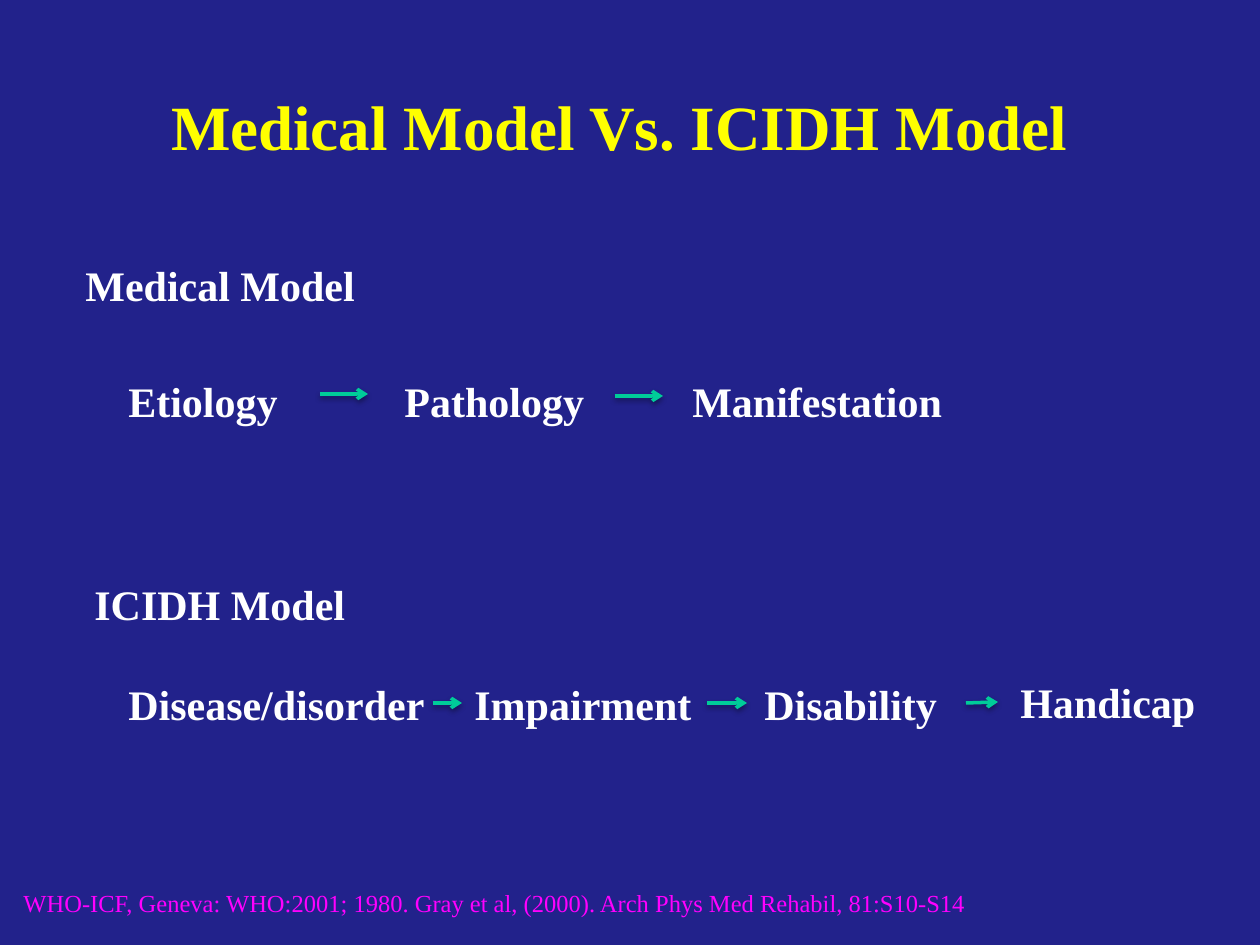
import pptx
import pptx.dml.color
import pptx.enum.shapes
import pptx.enum.text
import pptx.oxml
import pptx.util

SCALE = 914400 / 126
ALIGN = pptx.enum.text.PP_ALIGN
ANCHOR = pptx.enum.text.MSO_ANCHOR
NAMESPACE = 'xmlns:a="http://schemas.openxmlformats.org/drawingml/2006/main"'
ARROWHEAD = f'<a:tailEnd {NAMESPACE} type="arrow"/>'
SHADOW = (
    f'<a:effectLst {NAMESPACE}>'
    '<a:outerShdw blurRad="40000" dist="20000" dir="5400000" rotWithShape="0">'
    '<a:srgbClr val="000000"><a:alpha val="38000"/></a:srgbClr>'
    '</a:outerShdw></a:effectLst>'
)


def emu(*lengths):
    """Turn px lengths into EMU."""
    return [round(length * SCALE) for length in lengths]


def color(code):
    return pptx.dml.color.RGBColor.from_string(code)


deck = pptx.Presentation()
deck.slide_width, deck.slide_height = emu(1260, 945)
page = deck.slides.add_slide(deck.slide_layouts[6])
page.background.fill.solid()
page.background.fill.fore_color.rgb = color("22228B")

# Text, left, top, width, height
labels = [
    ("Medical Model", 73, 253, 297, 63),
    ("Etiology", 116, 369, 176, 63),
    ("Pathology", 392, 369, 207, 63),
    ("Manifestation", 680, 369, 277, 63),
    ("ICIDH Model", 82, 572, 278, 63),
    ("Disease/disorder", 116, 672, 325, 63),
    ("Impairment", 462, 672, 244, 63),
    ("Disability", 752, 672, 200, 63),
    ("Handicap", 1008, 670, 202, 63),
]
title = ("Medical Model Vs. ICIDH Model", 84, 73, 1071, 105)
citation = (
    "WHO-ICF, Geneva: WHO:2001; 1980. Gray et al, (2000). "
    "Arch Phys Med Rehabil, 81:S10-S14", 11, 882, 1206, 43,
)

# Entries, size, bold, colour, wrap, alignment, anchor
groups = [
    ([title], 36, True, "FFFF00", True, ALIGN.CENTER, ANCHOR.MIDDLE),
    ([citation], 14, False, "FF00FF", True, ALIGN.LEFT, ANCHOR.TOP),
    (labels, 24, True, "FFFFFF", False, ALIGN.LEFT, ANCHOR.TOP),
]
for entries, size, bold, code, wrap, alignment, anchor in groups:
    style = {"name": "Times New Roman", "size": pptx.util.Pt(size), "bold": bold}
    for text, *place in entries:
        box = page.shapes.add_textbox(*emu(*place))
        box.text_frame.word_wrap = wrap
        box.text_frame.vertical_anchor = anchor
        para = box.text_frame.paragraphs[0]
        para.alignment = alignment
        span = para.add_run()
        span.text = text
        for attribute, value in style.items():
            setattr(span.font, attribute, value)
        span.font.color.rgb = color(code)

# Start x, start y, end x, end y
arrows = [
    (320, 394, 368, 394),
    (615, 396, 663, 396),
    (433, 703, 462, 703),
    (707, 703, 747, 703),
    (966, 703, 998, 702),
]
for ends in arrows:
    arrow = page.shapes.add_connector(
        pptx.enum.shapes.MSO_CONNECTOR.STRAIGHT, *emu(*ends))
    arrow.line.width = pptx.util.Pt(2)
    arrow.line.color.rgb = color("00CC99")
    arrow.line._get_or_add_ln().append(pptx.oxml.parse_xml(ARROWHEAD))
    arrow._element.spPr.append(pptx.oxml.parse_xml(SHADOW))

deck.save("out.pptx")
